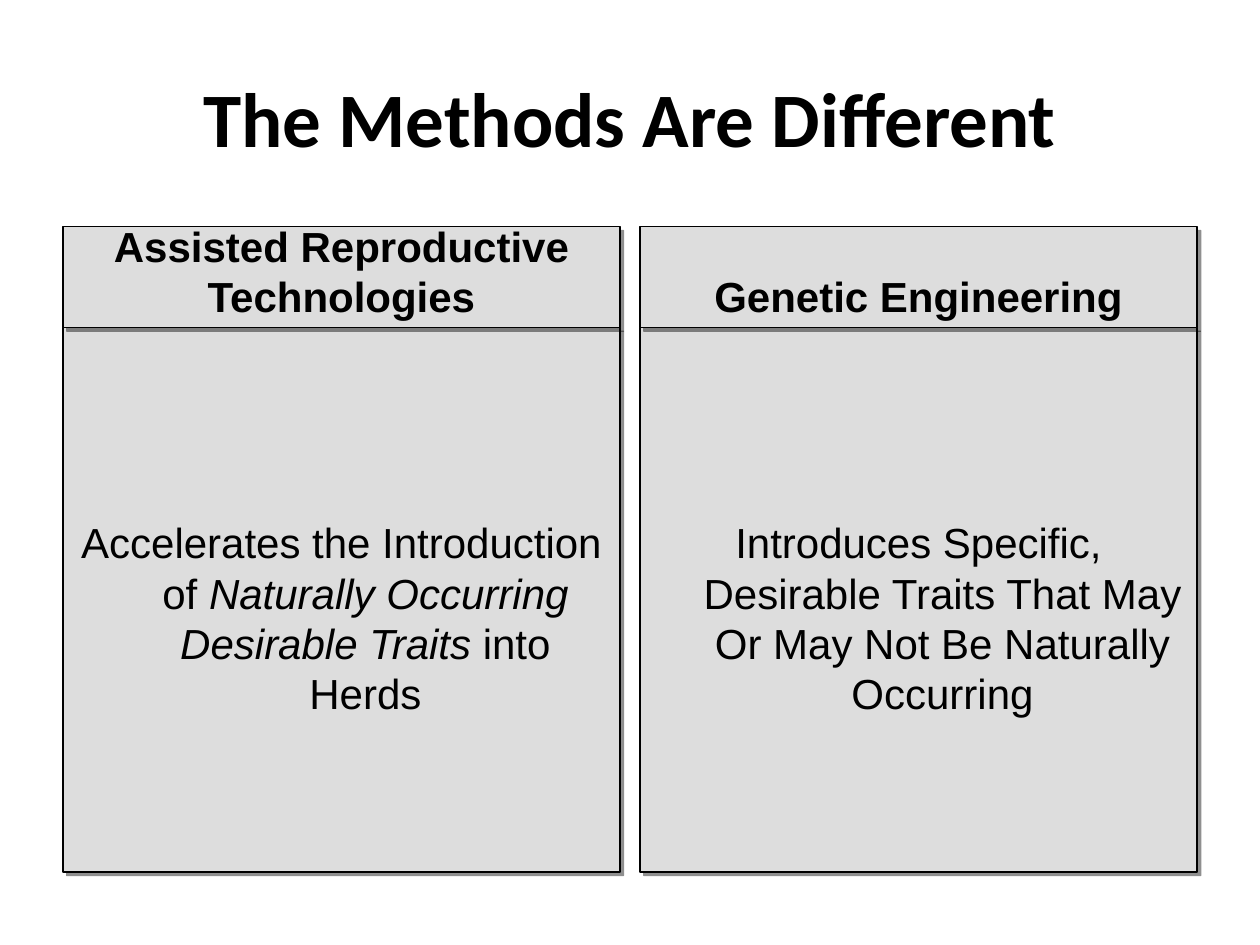
from dataclasses import dataclass

from lxml import etree
from pptx import Presentation
from pptx.dml.color import RGBColor
from pptx.enum.text import MSO_ANCHOR, MSO_AUTO_SIZE, PP_ALIGN
from pptx.oxml.ns import qn
from pptx.util import Inches, Pt

CENTER = PP_ALIGN.CENTER
TOP, MIDDLE, BOTTOM = MSO_ANCHOR.TOP, MSO_ANCHOR.MIDDLE, MSO_ANCHOR.BOTTOM
COMPARISON = 4


@dataclass(frozen=True)
class Theme:
    ink: RGBColor = RGBColor(0, 0, 0)
    panel: RGBColor = RGBColor(0xDD, 0xDD, 0xDD)
    shade: str = "000000"
    head_font: str = "Calibri"
    text_font: str = "Arial"
    head_size: float = 44
    text_size: float = 24
    gap: float = 4.8
    line: float = 0.75


@dataclass(frozen=True)
class Span:
    text: str
    bold: bool = False
    italic: bool = False


@dataclass(frozen=True)
class Column:
    index: int
    head_id: int
    body_id: int
    head: str
    body: tuple[Span, ...]


THEME = Theme()
WIDTH, HEIGHT = 10, 7.5
MARGIN = 0.05 * WIDTH
COL_WIDTH, COL_STEP = 4.42, 4.58
HEAD_TOP, HEAD_HIGH, BODY_HIGH = 0.24 * HEIGHT, 0.8, 4.32
INDENT, BODY_INSET = 0.38, 1.5

COLUMNS = (
    Column(1, 3, 4, "Genetic Engineering", (
        Span("Introduces Specific, Desirable Traits That May Or May Not Be "
             "Naturally Occurring"),
    )),
    Column(0, 1, 2, "Assisted Reproductive Technologies", (
        Span("Accelerates the Introduction of "),
        Span("Naturally Occurring Desirable Traits", italic=True),
        Span(" into Herds"),
    )),
)


def place(shape, left: float, top: float, width: float, height: float) -> None:
    """Set the box and bring the shape to the front."""
    shape.left, shape.top = Inches(left), Inches(top)
    shape.width, shape.height = Inches(width), Inches(height)
    shape.element.getparent().append(shape.element)


def write(shape, spans: tuple[Span, ...], font: str, size: float, anchor):
    frame = shape.text_frame
    frame.word_wrap = True
    frame.auto_size = MSO_AUTO_SIZE.NONE
    frame.vertical_anchor = anchor
    para = frame.paragraphs[0]
    para.alignment = CENTER
    for span in spans:
        run = para.add_run()
        run.text = span.text
        run.font.name, run.font.size = font, Pt(size)
        run.font.bold, run.font.italic = span.bold, span.italic
        run.font.color.rgb = THEME.ink
    return para


def add_shadow(shape) -> None:
    effects = etree.SubElement(shape.element.spPr, qn("a:effectLst"))
    outer = etree.SubElement(
        effects, qn("a:outerShdw"), blurRad="0", dist=str(Pt(3)),
        dir=str(45 * 60000), algn="ctr", rotWithShape="0")
    color = etree.SubElement(outer, qn("a:srgbClr"), val=THEME.shade)
    etree.SubElement(color, qn("a:alpha"), val="43000")


def draw_panel(shape, spans: tuple[Span, ...], col: int, top: float,
               height: float, anchor):
    place(shape, MARGIN + col * COL_STEP, top, COL_WIDTH, height)
    shape.fill.solid()
    shape.fill.fore_color.rgb = THEME.panel
    shape.line.color.rgb = THEME.ink
    shape.line.width = Pt(THEME.line)
    add_shadow(shape)
    para = write(shape, spans, THEME.text_font, THEME.text_size, anchor)
    para.space_before = Pt(THEME.gap)
    return para


def hang(para) -> None:
    """Give the paragraph a hanging indent without a bullet."""
    props = para._p.get_or_add_pPr()
    props.set("marL", str(Inches(INDENT)))
    props.set("indent", str(-Inches(INDENT)))
    etree.SubElement(props, qn("a:buNone"))


def draw_column(slots: dict, col: Column) -> None:
    body = slots[col.body_id]
    para = draw_panel(body, col.body, col.index, HEAD_TOP + HEAD_HIGH,
                      BODY_HIGH, TOP)
    para.space_before = Pt(0)
    body.text_frame.margin_top = Inches(BODY_INSET)
    hang(para)
    draw_panel(slots[col.head_id], (Span(col.head, bold=True),), col.index,
               HEAD_TOP, HEAD_HIGH, BOTTOM)


def main() -> None:
    deck = Presentation()
    deck.slide_width, deck.slide_height = Inches(WIDTH), Inches(HEIGHT)
    slide = deck.slides.add_slide(deck.slide_layouts[COMPARISON])
    slots = {s.placeholder_format.idx: s for s in slide.placeholders}
    for col in COLUMNS:
        draw_column(slots, col)
    title = slide.shapes.title
    place(title, MARGIN, 0.04 * HEIGHT, WIDTH - 2 * MARGIN, 1.25)
    write(title, (Span("The Methods Are Different", bold=True),),
          THEME.head_font, THEME.head_size, MIDDLE)
    deck.save("out.pptx")


if __name__ == "__main__":
    main()
